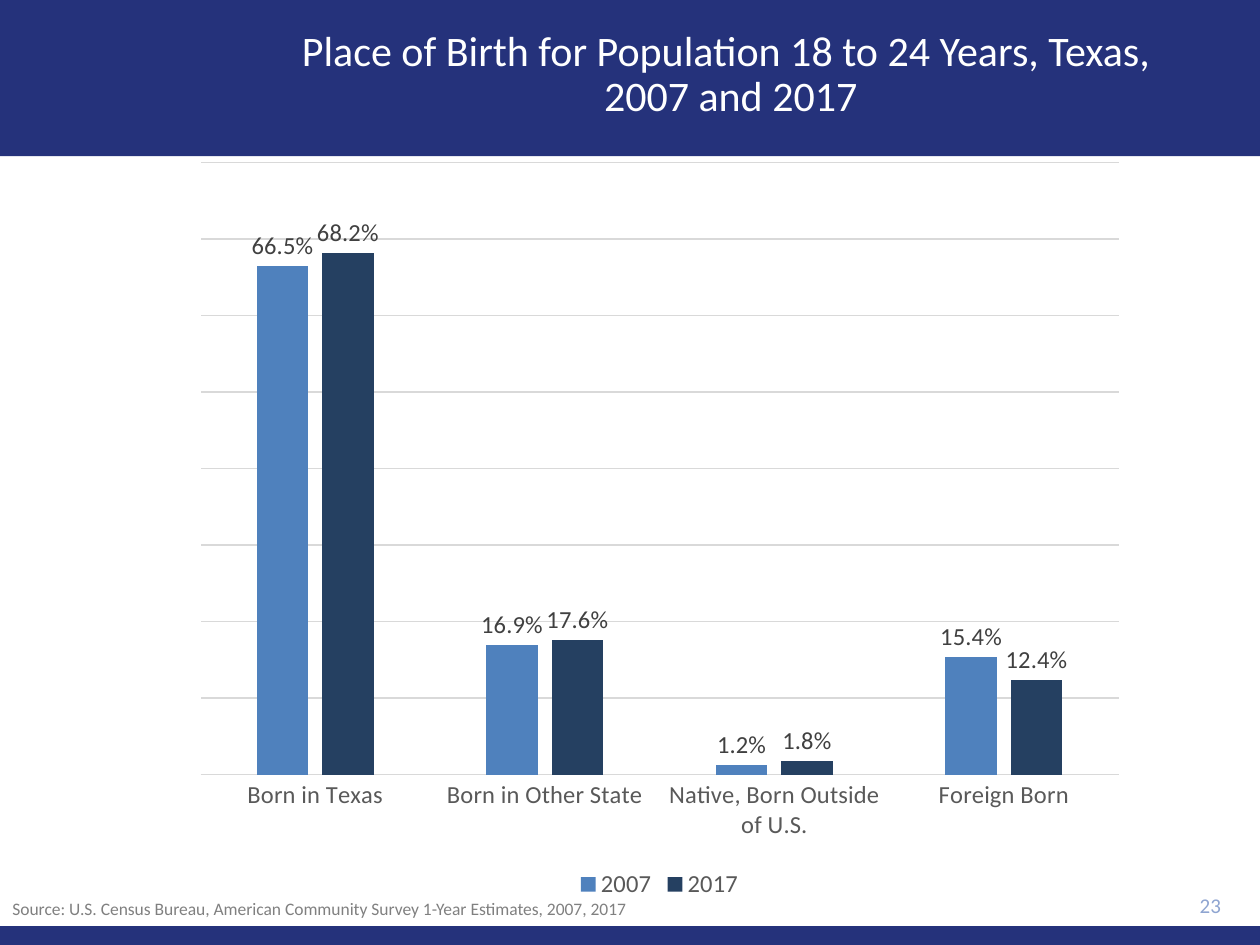
from pptx import Presentation
from pptx.chart.data import CategoryChartData
from pptx.dml.color import RGBColor
from pptx.enum.chart import (XL_CHART_TYPE, XL_LABEL_POSITION,
                             XL_LEGEND_POSITION, XL_TICK_MARK)
from pptx.enum.shapes import MSO_SHAPE
from pptx.enum.text import MSO_ANCHOR, PP_ALIGN
from pptx.util import Pt

NAVY = RGBColor(0x25, 0x32, 0x7B)
WHITE = RGBColor(0xFF, 0xFF, 0xFF)
PALE_BLUE = RGBColor(0x8F, 0xA5, 0xD1)
SOURCE_GRAY = RGBColor(0x80, 0x80, 0x80)
AXIS_GRAY = RGBColor(0x59, 0x59, 0x59)
LABEL_GRAY = RGBColor(0x40, 0x40, 0x40)
GRID_GRAY = RGBColor(0xD9, 0xD9, 0xD9)
BLUE = RGBColor(0x4F, 0x81, 0xBD)
DARK_BLUE = RGBColor(0x25, 0x40, 0x61)

FONT = "Calibri"
WIDTH, HEIGHT = 720, 540
PERCENT = "0.0%"

CATEGORIES = ["Born in Texas", "Born in Other State",
              "Native, Born Outside of U.S.", "Foreign Born"]
SERIES = [
    ("2007", [0.665, 0.169, 0.012, 0.154], BLUE),
    ("2017", [0.682, 0.176, 0.018, 0.124], DARK_BLUE),
]


def format_font(font, size, color):
    font.name = FONT
    font.size = Pt(size)
    font.color.rgb = color


def write_text(shape, text, size, color, align=PP_ALIGN.LEFT,
               anchor=MSO_ANCHOR.TOP, line_spacing=None):
    frame = shape.text_frame
    frame.word_wrap = True
    frame.vertical_anchor = anchor
    paragraph = frame.paragraphs[0]
    paragraph.text = text
    paragraph.alignment = align
    paragraph.line_spacing = line_spacing
    for run in paragraph.runs:
        format_font(run.font, size, color)


def add_band(slide, top, height):
    band = slide.shapes.add_shape(MSO_SHAPE.RECTANGLE, 0, Pt(top),
                                  Pt(WIDTH), Pt(height))
    band.shadow.inherit = False
    band.fill.solid()
    band.fill.fore_color.rgb = NAVY
    band.line.fill.background()


def place_title(slide, text):
    title = slide.shapes.title
    title.left, title.top = Pt(122.4), Pt(7.2)
    title.width, title.height = Pt(590.4), Pt(72)
    write_text(title, text, 24, WHITE, align=PP_ALIGN.CENTER,
               anchor=MSO_ANCHOR.MIDDLE, line_spacing=0.9)
    # Bring the title in front of the header band
    slide.shapes._spTree.append(title._element)


def add_text(slide, left, top, width, height, text, **text_format):
    box = slide.shapes.add_textbox(Pt(left), Pt(top), Pt(width), Pt(height))
    write_text(box, text, **text_format)


def format_line(line):
    line.color.rgb = GRID_GRAY
    line.width = Pt(0.75)


def format_axes(chart):
    category_axis = chart.category_axis
    category_axis.major_tick_mark = XL_TICK_MARK.NONE
    category_axis.minor_tick_mark = XL_TICK_MARK.NONE
    format_line(category_axis.format.line)
    format_font(category_axis.tick_labels.font, 14, AXIS_GRAY)

    value_axis = chart.value_axis
    value_axis.minimum_scale = 0
    value_axis.maximum_scale = 0.8
    value_axis.major_unit = 0.1
    value_axis.has_major_gridlines = True
    format_line(value_axis.major_gridlines.format.line)
    value_axis.tick_labels.number_format = PERCENT
    value_axis.tick_labels.number_format_is_linked = False
    value_axis.visible = False


def format_series(series, color):
    series.smooth = False if hasattr(series, "smooth") else None
    series.format.fill.solid()
    series.format.fill.fore_color.rgb = color
    labels = series.data_labels
    labels.show_value = True
    labels.position = XL_LABEL_POSITION.OUTSIDE_END
    labels.number_format = PERCENT
    labels.number_format_is_linked = False
    format_font(labels.font, 14, LABEL_GRAY)


def add_birthplace_chart(slide):
    data = CategoryChartData(number_format=PERCENT)
    data.categories = CATEGORIES
    for name, values, _ in SERIES:
        data.add_series(name, values)
    chart = slide.shapes.add_chart(XL_CHART_TYPE.COLUMN_CLUSTERED, Pt(103.7),
                                   Pt(84.2), Pt(546.5), Pt(432.7), data).chart
    chart.has_title = False
    format_font(chart.font, 14, AXIS_GRAY)
    format_axes(chart)

    plot = chart.plots[0]
    plot.vary_by_categories = False
    plot.gap_width = 219
    plot.overlap = -27
    for series, (_, _, color) in zip(plot.series, SERIES):
        format_series(series, color)

    chart.has_legend = True
    chart.legend.position = XL_LEGEND_POSITION.BOTTOM
    chart.legend.include_in_layout = False
    format_font(chart.legend.font, 14, AXIS_GRAY)


def main():
    presentation = Presentation()
    presentation.slide_width, presentation.slide_height = Pt(WIDTH), Pt(HEIGHT)
    slide = presentation.slides.add_slide(presentation.slide_layouts[5])

    # Header and footer bands
    add_band(slide, 0, 89.3)
    add_band(slide, 529.2, HEIGHT - 529.2)

    # Title and page number
    place_title(slide, "Place of Birth for Population 18 to 24 Years, Texas, "
                       "\v2007 and 2017")
    add_text(slide, 640.8, 504.7, 64, 24.5, "23", size=12, color=PALE_BLUE,
             align=PP_ALIGN.RIGHT, anchor=MSO_ANCHOR.MIDDLE)

    # Chart and its source
    add_birthplace_chart(slide)
    add_text(slide, 0, 509.8, 504, 19.4,
             "Source: U.S. Census Bureau, American Community Survey "
             "1-Year Estimates, 2007, 2017", size=10, color=SOURCE_GRAY)

    presentation.save("out.pptx")


if __name__ == "__main__":
    main()
